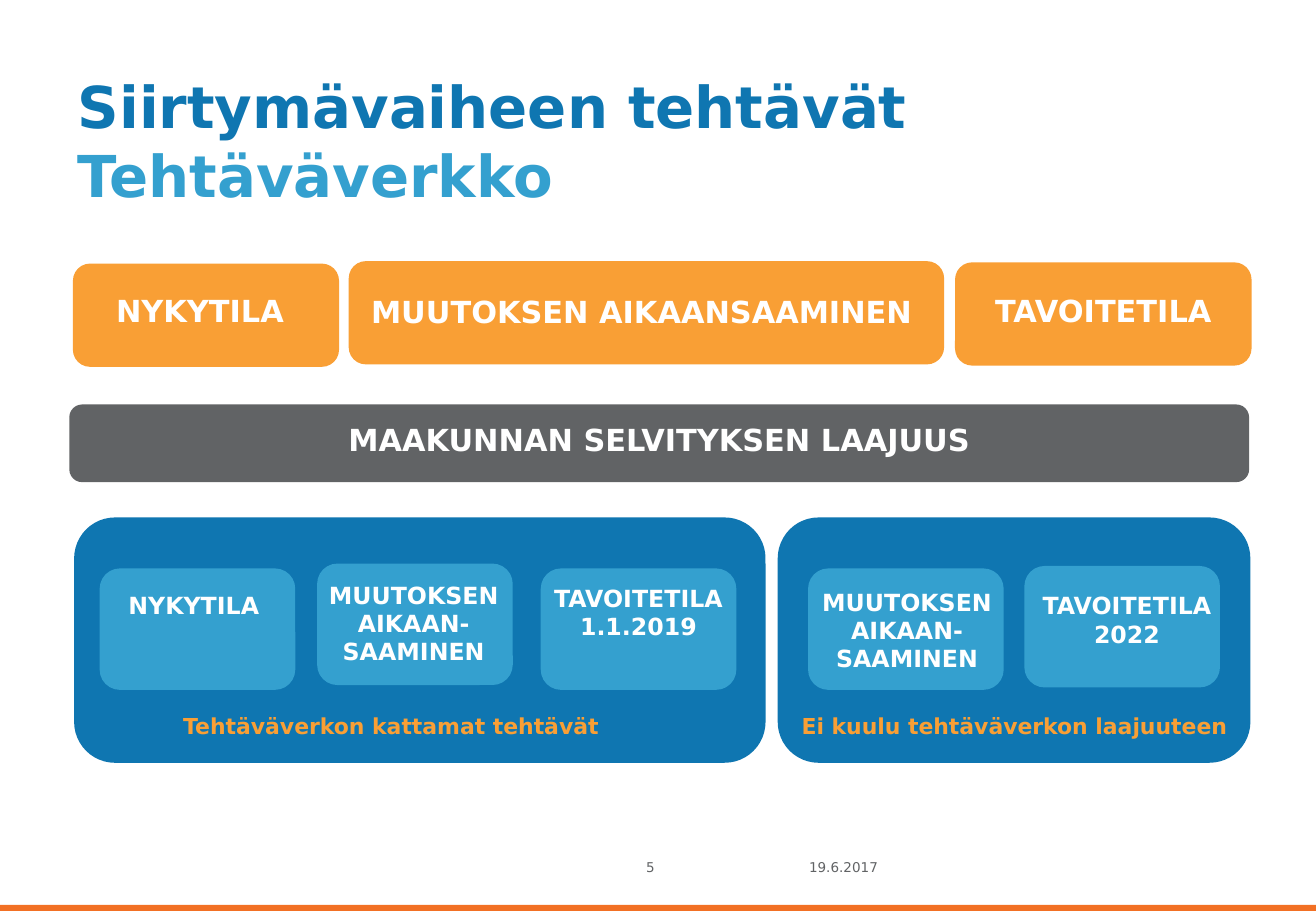
import dataclasses

import pptx
import pptx.dml.color
import pptx.enum.shapes
import pptx.enum.text
import pptx.util

PX = 9144  # 100 px to the inch
SHAPE = pptx.enum.shapes.MSO_SHAPE
ALIGN = pptx.enum.text.PP_ALIGN
ANCHOR = pptx.enum.text.MSO_ANCHOR


@dataclasses.dataclass(frozen=True)
class Theme:
    font: str = "DejaVu Sans"
    blue: str = "0F76B1"
    light: str = "34A0CF"
    orange: str = "F99F35"
    gray: str = "616365"
    stripe: str = "F27024"
    white: str = "FFFFFF"
    title: float = 34.2
    band: int = 18
    tile: int = 14
    caption: int = 13
    footer: int = 8


T = Theme()


def emu(*lengths):
    return [pptx.util.Emu(n * PX) for n in lengths]


def rgb(color):
    return pptx.dml.color.RGBColor.from_string(color)


def style(r, size, color, bold=True):
    for name, value in dict(name=T.font, size=pptx.util.Pt(size), bold=bold).items():
        setattr(r.font, name, value)
    r.font.color.rgb = rgb(color)


def write(tf, lines, size, color, align=ALIGN.CENTER, bold=True):
    for i, line in enumerate(lines):
        p = tf.add_paragraph() if i else tf.paragraphs[0]
        p.alignment = align
        r = p.add_run()
        r.text = line
        style(r, size, color, bold)


def add_block(s, box, fill, kind=SHAPE.ROUNDED_RECTANGLE):
    sp = s.shapes.add_shape(kind, *emu(*box))
    sp.shadow.inherit = False
    sp.fill.solid()
    sp.fill.fore_color.rgb = rgb(fill)
    sp.line.fill.background()
    return sp


def add_labelled(s, box, fill, lines, size, color, top, shift=0):
    """Block whose text starts `top` below its edge, `shift` right of its centre."""
    tf = add_block(s, box, fill).text_frame
    left, right, above = emu(max(2 * shift, 0), max(-2 * shift, 0), top)
    frame = dict(word_wrap=True, vertical_anchor=ANCHOR.TOP, margin_left=left,
                 margin_right=right, margin_top=above, margin_bottom=0)
    for name, value in frame.items():
        setattr(tf, name, value)
    write(tf, lines, size, color)


def add_title(s, box, first, second):
    sp = s.shapes.title
    sp.left, sp.top, sp.width, sp.height = emu(*box)
    tf = sp.text_frame
    tf.auto_size = pptx.enum.text.MSO_AUTO_SIZE.NONE
    tf.vertical_anchor = ANCHOR.MIDDLE
    write(tf, [first], T.title, T.blue, ALIGN.LEFT)
    p = tf.paragraphs[0]
    p.add_line_break()
    r = p.add_run()
    r.text = second
    style(r, T.title, T.light)


def add_phases(s, box):
    x, y, w, h = box
    phases = [("NYKYTILA", 0, 2, 219, 19, -5),
              ("MUUTOKSEN AIKAANSAAMINEN", 227, 0, 490, 22, -4),
              ("TAVOITETILA", w - 244, 1, 244, 20, 0)]
    for text, dx, dy, width, top, shift in phases:
        add_labelled(s, (x + dx, y + dy, width, h), T.orange, [text],
                     T.band, T.white, top, shift)


def add_panel(s, box, caption, shift, tiles):
    x, y, w, h = box
    add_labelled(s, box, T.blue, [caption], T.caption, T.orange, h - 51, shift)
    for lines, dx, dy, top, text_shift in tiles:
        add_labelled(s, (x + dx, y + dy, 161, 100), T.light, lines,
                     T.tile, T.white, top, text_shift)


def add_footer(s, box, number, date):
    x, y, w, h = box
    add_block(s, (x, y + h - 5, w, 5), T.stripe, SHAPE.RECTANGLE)
    for text, left in ((number, 522), (date, 656)):
        tf = s.shapes.add_textbox(*emu(x + left, y, 96, 40)).text_frame
        tf.word_wrap = True
        write(tf, [text], T.footer, T.gray, ALIGN.LEFT, bold=False)


def main():
    prs = pptx.Presentation()
    prs.slide_width, prs.slide_height = emu(1083, 750)
    s = prs.slides.add_slide(prs.slide_layouts[5])
    change = ["MUUTOKSEN AIKAAN-SAAMINEN"]

    add_title(s, (54, 53, 975, 125), "Siirtymävaiheen tehtävät", "Tehtäväverkko")
    add_phases(s, (60, 215, 970, 85))
    add_labelled(s, (57, 333, 971, 64), T.gray, ["MAAKUNNAN SELVITYKSEN LAAJUUS"],
                 T.band, T.white, 11)
    add_panel(s, (61, 426, 569, 202), "Tehtäväverkon kattamat tehtävät", -24, [
        (["NYKYTILA"], 21, 42, 14, -3),
        (change, 200, 38, 9, -1),
        (["TAVOITETILA", "1.1.2019"], 384, 42, 8, 0)])
    add_panel(s, (640, 426, 389, 202), "Ei kuulu tehtäväverkon laajuuteen", 0, [
        (change, 25, 42, 11, 1),
        (["TAVOITETILA", "2022"], 203, 40, 16, 4)])
    add_footer(s, (0, 702, 1083, 48), "5", "19.6.2017")
    prs.save("out.pptx")


if __name__ == "__main__":
    main()
